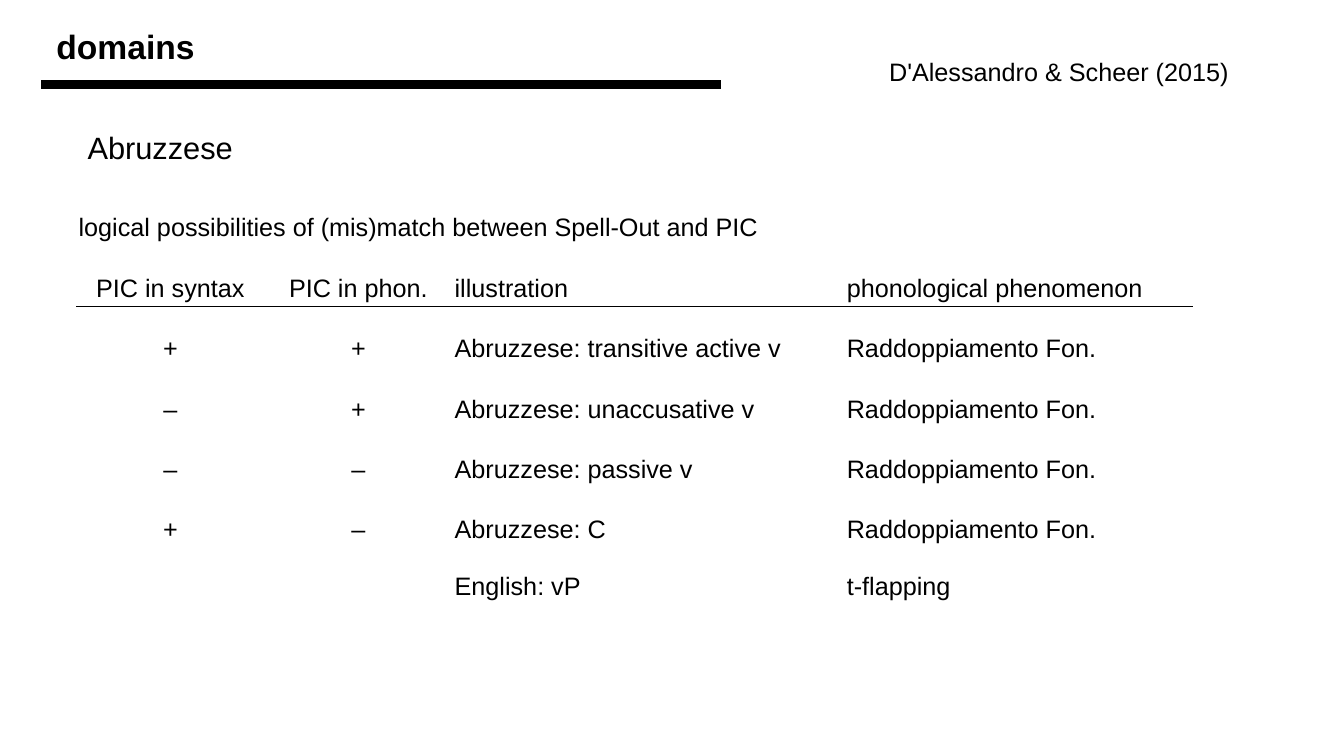
from lxml import etree
from pptx import Presentation
from pptx.dml.color import RGBColor
from pptx.enum.shapes import MSO_CONNECTOR as Conn
from pptx.enum.text import MSO_ANCHOR as Anchor, MSO_AUTO_SIZE as Auto, PP_ALIGN as Align
from pptx.oxml.ns import qn
from pptx.util import Inches, Pt

BLACK = RGBColor(0, 0, 0)
WHITE = RGBColor(255, 255, 255)
FONT = "Arial"

TITLE = "domains"
SOURCE = "D'Alessandro & Scheer (2015)"
TOPIC = "Abruzzese"
CAPTION = "logical possibilities of (mis)match between Spell-Out and PIC"
HEAD = ("PIC in syntax", "PIC in phon.", "illustration", "phonological phenomenon")
CASES = [
    ("+", "+", "Abruzzese: transitive active v", "Raddoppiamento Fon."),
    ("–", "+", "Abruzzese: unaccusative v", "Raddoppiamento Fon."),
    ("–", "–", "Abruzzese: passive v", "Raddoppiamento Fon."),
    ("+", "–", "Abruzzese: C\nEnglish: vP", "Raddoppiamento Fon.\nt-flapping"),
]
WIDTHS = (1.86, 1.87, 3.89, 3.45)
LINE = 0.6


def write(frame, text, size, bold=False, align=Align.LEFT, spacing=None):
    for i, part in enumerate(text.split("\n")):
        para = frame.add_paragraph() if i else frame.paragraphs[0]
        para.alignment = align
        para.line_spacing = spacing
        run = para.add_run()
        run.text = part
        font = run.font
        font.name, font.size, font.bold = FONT, Pt(size), bold
        font.color.rgb = BLACK


def place(shape, text, size, bold=False):
    frame = shape.text_frame
    frame.word_wrap = True
    frame.auto_size = Auto.NONE
    frame.vertical_anchor = Anchor.TOP
    write(frame, text, size, bold)


def border(cell, top, bottom):
    """Draw white sides and the given top and bottom edges."""
    props = cell._tc.get_or_add_tcPr()
    edges = (("a:lnL", WHITE), ("a:lnR", WHITE), ("a:lnT", top), ("a:lnB", bottom))
    for i, (tag, color) in enumerate(edges):
        edge = etree.Element(qn(tag), w=str(Pt(1)))
        fill = etree.SubElement(edge, qn("a:solidFill"))
        etree.SubElement(fill, qn("a:srgbClr"), val=str(color))
        props.insert(i, edge)


def add_grid(slide):
    rows = [(CAPTION, "", "", ""), HEAD] + CASES
    frame = slide.shapes.add_table(
        len(rows), len(WIDTHS), Inches(0.76), Inches(1.84),
        Inches(sum(WIDTHS)), Inches(LINE * (len(rows) + 1)))
    table = frame.table
    table.first_row = table.horz_banding = False
    for col, width in zip(table.columns, WIDTHS):
        col.width = Inches(width)
    for r, row in enumerate(rows):
        lines = max(text.count("\n") + 1 for text in row)
        table.rows[r].height = Inches(LINE * lines)
        for c, text in enumerate(row):
            cell = table.cell(r, c)
            cell.margin_left = cell.margin_right = Inches(0.02)
            cell.margin_top = cell.margin_bottom = 0
            cell.fill.background()
            border(cell, BLACK if r == 2 else WHITE, BLACK if r == 1 else WHITE)
            if text:
                align = Align.CENTER if r and c < 2 else Align.LEFT
                write(cell.text_frame, text, 18, align=align, spacing=2.0)
    table.cell(0, 0).merge(table.cell(0, len(WIDTHS) - 1))


def main():
    deck = Presentation()
    deck.slide_width, deck.slide_height = Inches(13.33), Inches(7.5)
    slide = deck.slides.add_slide(deck.slide_layouts[5])
    shapes = slide.shapes

    title = shapes.title
    title.left, title.top = Inches(0.46), Inches(0.21)
    title.width, title.height = Inches(8.35), Inches(0.5)
    place(title, TITLE, 24, bold=True)

    rule = shapes.add_connector(
        Conn.STRAIGHT, Inches(0.41), Inches(0.84), Inches(7.15), Inches(0.84))
    rule.line.color.rgb = BLACK
    rule.line.width = Pt(6)
    etree.SubElement(rule._element.spPr, qn("a:effectLst"))

    for text, size, box in (
        (SOURCE, 18, (8.72, 0.51, 4.17, 0.44)),
        (TOPIC, 22, (0.77, 1.23, 11.88, 0.47)),
    ):
        place(shapes.add_textbox(*map(Inches, box)), text, size)

    add_grid(slide)
    deck.save("out.pptx")


if __name__ == "__main__":
    main()
